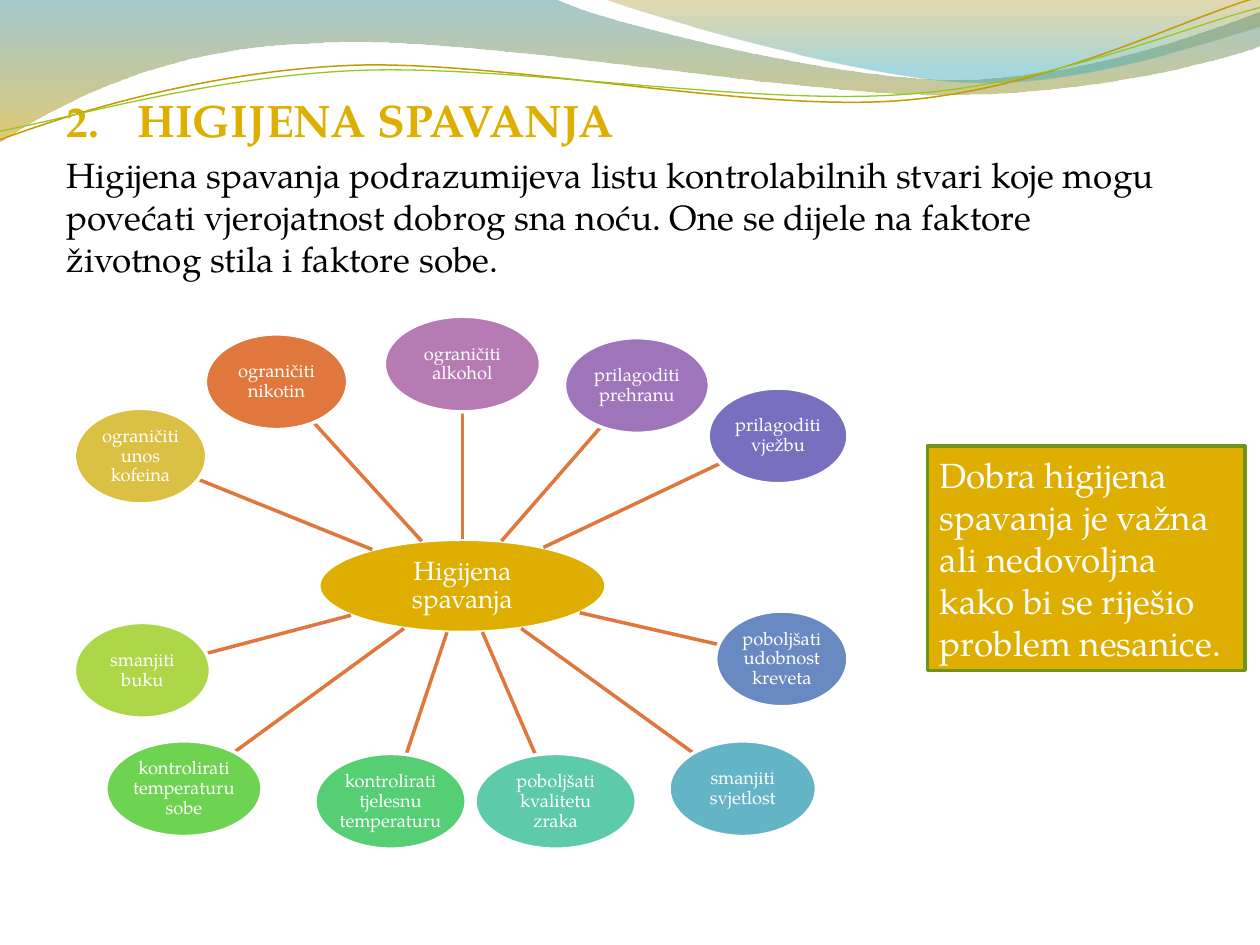
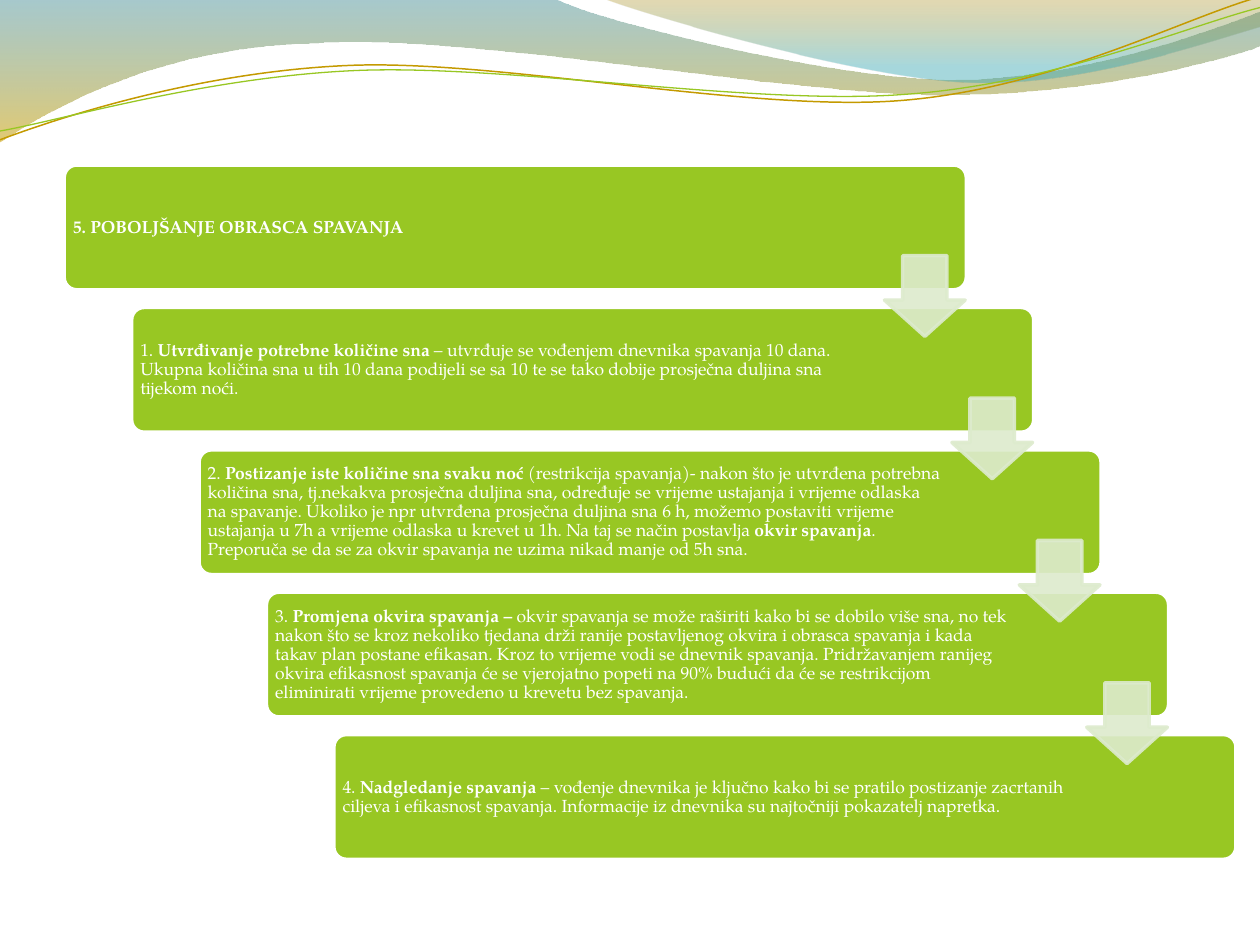
from math import hypot

from lxml.etree import SubElement
from pptx import Presentation
from pptx.dml.color import RGBColor
from pptx.enum.shapes import MSO_CONNECTOR, MSO_SHAPE
from pptx.enum.text import MSO_ANCHOR, MSO_AUTO_SIZE, PP_ALIGN
from pptx.oxml.ns import qn
from pptx.util import Inches, Pt

FONT = "TeX Gyre Pagella"
WHITE = RGBColor(0xFF, 0xFF, 0xFF)
BLACK = RGBColor(0x00, 0x00, 0x00)
GOLD = RGBColor(0xDE, 0xAE, 0x00)
DARK_GOLD = RGBColor(0xC4, 0x9A, 0x00)
GREEN = RGBColor(0x98, 0xC7, 0x23)
DARK_GREEN = RGBColor(0x70, 0x93, 0x1A)
PALE_GREEN = RGBColor(0xDD, 0xEB, 0xCD)
ORANGE = RGBColor(0xE0, 0x77, 0x3C)

# Header waves: a start point, then lines (one point) and Bezier curves (three points)
LEFT_WAVE = [
    (0, 0), [(4.4, -0.01)],
    [(4.76, 0.17), (6.64, 0.63), (7.58, 0.63)],
    [(8.53, 0.63), (9.58, 0.26), (10, 0.09)],
    [(10.01, 0.36)],
    [(9.83, 0.44), (8.7, 0.76), (7.46, 0.75)],
    [(6.22, 0.75), (3.82, 0.28), (2.57, 0.34)],
    [(1.29, 0.36), (0.46, 0.83), (-0.01, 1.13)],
]
RIGHT_WAVE = [
    (4.79, -0.01),
    [(5.09, 0.11), (6.82, 0.62), (7.69, 0.65)],
    [(8.56, 0.69), (9.61, 0.32), (10, 0.21)],
    [(10, 0)],
]
GOLD_CURVE = [
    (0, 1.11),
    [(0.48, 0.93), (1.58, 0.57), (2.77, 0.52)],
    [(3.95, 0.47), (5.93, 0.89), (7.13, 0.8)],
    [(8.33, 0.71), (9.38, 0.15), (9.98, -0.02)],
]
GREEN_CURVE = [
    (0, 1.04),
    [(0.47, 0.96), (1.64, 0.61), (2.83, 0.56)],
    [(4.03, 0.51), (5.97, 0.84), (7.17, 0.75)],
    [(8.36, 0.67), (9.41, 0.21), (10, 0.06)],
]
# Gradient stops: position, colour, opacity in percent
LEFT_STOPS = [(0, "3B8890", 45), (1, "C99E00", 55)]
RIGHT_STOPS = [(0, "A48100", 30), (0.8, "3EA9B4", 45)]

INTRODUCTION = (
    "Higijena spavanja podrazumijeva listu kontrolabilnih stvari koje mogu "
    "povećati vjerojatnost dobrog sna noću. One se dijele na faktore "
    "životnog stila i faktore sobe."
)
WARNING = (
    "Dobra higijena spavanja je važna ali nedovoljna kako bi se riješio "
    "problem nesanice."
)

# Hub and factors as left, top, width, height
HUB = (2.53, 4.28, 2.28, 0.74)
FACTOR_HEIGHT = 0.76
FACTORS = [  # text, left, top, width, colour
    ("ograničiti alkohol", 3.05, 2.51, 1.24, "B77BB4"),
    ("prilagoditi prehranu", 4.48, 2.68, 1.15, "9E75BB"),
    ("prilagoditi vježbu", 5.62, 3.08, 1.11, "786FBE"),
    ("poboljšati udobnost kreveta", 5.68, 4.85, 1.05, "6989C2"),
    ("smanjiti svjetlost", 5.31, 5.88, 1.17, "63B5C6"),
    ("poboljšati kvalitetu zraka", 3.77, 5.98, 1.28, "5DCAAA"),
    ("kontrolirati tjelesnu temperaturu", 2.5, 5.98, 1.2, "56CE73"),
    ("kontrolirati temperaturu sobe", 0.84, 5.88, 1.24, "6ED350"),
    ("smanjiti buku", 0.59, 4.94, 1.08, "ADD749"),
    ("ograničiti unos kofeina", 0.59, 3.24, 1.05, "DBC143"),
    ("ograničiti nikotin", 1.63, 2.65, 1.13, "E0773C"),
]

# Each step is a list of runs; every second run is bold
STEPS = [
    ["", "5. POBOLJŠANJE OBRASCA SPAVANJA"],
    ["1. ", "Utvrđivanje potrebne količine sna",
     " – utvrđuje se vođenjem dnevnika spavanja 10 dana. Ukupna količina sna "
     "u tih 10 dana podijeli se sa 10 te se tako dobije prosječna duljina sna "
     "tijekom noći."],
    ["2. ", "Postizanje iste količine sna svaku noć",
     " (restrikcija spavanja)- nakon što je utvrđena potrebna količina sna, "
     "tj.nekakva prosječna duljina sna, određuje se vrijeme ustajanja i "
     "vrijeme odlaska na spavanje. Ukoliko je npr utvrđena prosječna duljina "
     "sna 6 h, možemo postaviti vrijeme ustajanja u 7h a vrijeme odlaska u "
     "krevet u 1h. Na taj se način postavlja ", "okvir spavanja",
     ". Preporuča se da se za okvir spavanja ne uzima nikad manje od 5h sna."],
    ["3. ", "Promjena okvira spavanja – ",
     "okvir spavanja se može raširiti kako bi se dobilo više sna, no tek "
     "nakon što se kroz nekoliko tjedana drži ranije postavljenog okvira i "
     "obrasca spavanja i kada takav plan postane efikasan. Kroz to vrijeme "
     "vodi se dnevnik spavanja. Pridržavanjem ranijeg okvira efikasnost "
     "spavanja će se vjerojatno popeti na 90% budući da će se restrikcijom "
     "eliminirati vrijeme provedeno u krevetu bez spavanja."],
    ["4. ", "Nadgledanje spavanja",
     " – vođenje dnevnika je ključno kako bi se pratilo postizanje zacrtanih "
     "ciljeva i efikasnost spavanja. Informacije iz dnevnika su najtočniji "
     "pokazatelj napretka."],
]


def write_text(shape, text, size, color=WHITE, bold=False, align=PP_ALIGN.LEFT,
               anchor=MSO_ANCHOR.MIDDLE, spacing=1.0, insets=(0.1, 0.05, 0.1, 0.05)):
    """Write a string, or a list of runs in which every second one is bold."""
    frame = shape.text_frame
    frame.word_wrap = True
    frame.auto_size = MSO_AUTO_SIZE.NONE
    frame.vertical_anchor = anchor
    (frame.margin_left, frame.margin_top,
     frame.margin_right, frame.margin_bottom) = map(Inches, insets)
    paragraph = frame.paragraphs[0]
    paragraph.alignment = align
    paragraph.line_spacing = spacing
    parts = [text] if isinstance(text, str) else text
    for index, part in enumerate(parts):
        if not part:
            continue
        run = paragraph.add_run()
        run.text = part
        run.font.name = FONT
        run.font.size = Pt(size)
        run.font.bold = bold or index % 2 == 1
        run.font.color.rgb = color
    return paragraph


def number_paragraph(paragraph, start, color, indent):
    """Turn a paragraph into a numbered item with a hanging indent."""
    properties = paragraph._p.get_or_add_pPr()
    properties.set("marL", str(Inches(indent)))
    properties.set("indent", str(-Inches(indent)))
    bullet_color = SubElement(properties, qn("a:buClr"))
    SubElement(bullet_color, qn("a:srgbClr"), val=str(color))
    SubElement(properties, qn("a:buSzPct"), val="95000")
    SubElement(properties, qn("a:buFont"), typeface="+mj-lt")
    SubElement(properties, qn("a:buAutoNum"), type="arabicPeriod", startAt=str(start))


def set_opacity(shape, percents):
    """Set the opacity of the shape's colours, in document order."""
    colors = list(shape.element.iter(qn("a:srgbClr")))
    for color, percent in zip(colors, percents):
        SubElement(color, qn("a:alpha"), val=str(percent * 1000))


def add_shape(slide, kind, box, fill, line, adjustments=()):
    shape = slide.shapes.add_shape(kind, *map(Inches, box))
    shape.shadow.inherit = False
    shape.fill.solid()
    shape.fill.fore_color.rgb = fill
    shape.line.color.rgb = line
    shape.line.width = Pt(2)
    for index, value in enumerate(adjustments):
        shape.adjustments[index] = value
    return shape


def add_outline(slide, outline, close):
    """Draw a freeform through the end points, then bend its curved segments."""
    start, *segments = outline
    builder = slide.shapes.build_freeform(*map(Inches, start))
    builder.add_line_segments(
        [tuple(map(Inches, segment[-1])) for segment in segments], close=close)
    shape = builder.convert_to_shape()
    shape.shadow.inherit = False
    lines = list(shape.element.iter(qn("a:lnTo")))
    for line, segment in zip(lines, segments):
        if len(segment) == 1:
            continue
        curve = line.makeelement(qn("a:cubicBezTo"))
        for x, y in segment:
            SubElement(curve, qn("a:pt"), x=str(Inches(x) - shape.left),
                       y=str(Inches(y) - shape.top))
        line.getparent().replace(line, curve)
    return shape


def add_wave(slide, outline, stops):
    shape = add_outline(slide, outline, close=True)
    shape.line.fill.background()
    shape.fill.gradient()
    shape.fill.gradient_angle = 270
    for stop, (position, color, _) in zip(shape.fill.gradient_stops, stops):
        stop.position = position
        stop.color.rgb = RGBColor.from_string(color)
    set_opacity(shape, [opacity for _, _, opacity in stops])


def add_curve(slide, outline, color, width):
    shape = add_outline(slide, outline, close=False)
    shape.fill.background()
    shape.line.color.rgb = color
    shape.line.width = Pt(width)


def add_header(slide):
    add_wave(slide, LEFT_WAVE, LEFT_STOPS)
    add_wave(slide, RIGHT_WAVE, RIGHT_STOPS)
    add_curve(slide, GOLD_CURVE, DARK_GOLD, 0.85)
    add_curve(slide, GREEN_CURVE, GREEN, 0.75)


def center(box):
    left, top, width, height = box
    return left + width / 2, top + height / 2


def edge_point(box, target):
    """Point where the line from the ellipse's centre to target leaves it."""
    x, y = center(box)
    dx, dy = target[0] - x, target[1] - y
    reach = 1 / hypot(dx / (box[2] / 2), dy / (box[3] / 2))
    return x + dx * reach, y + dy * reach


def add_spoke(slide, hub, factor):
    start, end = edge_point(hub, center(factor)), edge_point(factor, center(hub))
    spoke = slide.shapes.add_connector(
        MSO_CONNECTOR.STRAIGHT, *map(Inches, (*start, *end)))
    spoke.line.color.rgb = ORANGE
    spoke.line.width = Pt(2)
    SubElement(spoke.element.find(qn("p:spPr")), qn("a:effectLst"))


def add_bubble(slide, text, box, color, size):
    bubble = add_shape(slide, MSO_SHAPE.OVAL, box, color, WHITE)
    write_text(bubble, text, size, align=PP_ALIGN.CENTER, spacing=0.9, insets=[0.01] * 4)


def build_hygiene_slide(presentation):
    slide = presentation.slides.add_slide(presentation.slide_layouts[5])
    add_header(slide)

    # Title and introduction
    title = slide.shapes.title
    title.left, title.top, title.width, title.height = map(Inches, (0.43, 0.68, 8.98, 0.55))
    heading = write_text(title, "HIGIJENA SPAVANJA", 26, color=GOLD, bold=True,
                         anchor=MSO_ANCHOR.TOP)
    number_paragraph(heading, 2, GOLD, 0.56)
    introduction = slide.shapes.add_textbox(*map(Inches, (0.43, 1.17, 8.98, 1.1)))
    write_text(introduction, INTRODUCTION, 20, color=BLACK, anchor=MSO_ANCHOR.TOP)

    # Hub with its factors
    add_bubble(slide, "Higijena spavanja", HUB, GOLD, 15)
    for text, left, top, width, color in FACTORS:
        box = (left, top, width, FACTOR_HEIGHT)
        add_spoke(slide, HUB, box)
        add_bubble(slide, text, box, RGBColor.from_string(color), 10.5)

    # Warning box
    warning = add_shape(slide, MSO_SHAPE.RECTANGLE, (7.36, 3.54, 2.52, 1.78),
                        GOLD, DARK_GREEN)
    write_text(warning, WARNING, 20)


def build_steps_slide(presentation):
    slide = presentation.slides.add_slide(presentation.slide_layouts[6])
    add_header(slide)
    step_x, step_y = 0.535, 1.13

    # Staircase of steps
    for index, runs in enumerate(STEPS):
        box = (0.51 + index * step_x, 1.31 + index * step_y, 7.16, 0.99)
        step = add_shape(slide, MSO_SHAPE.ROUNDED_RECTANGLE, box, GREEN, WHITE, [0.1])
        write_text(step, runs, 10, spacing=0.9, insets=(0.04, 0.04, 1.24, 0.04))

    # Arrows from each step to the next
    for index in range(len(STEPS) - 1):
        box = (7.02 + index * step_x, 2.03 + index * step_y, 0.64, 0.64)
        arrow = add_shape(slide, MSO_SHAPE.DOWN_ARROW, box, PALE_GREEN, PALE_GREEN,
                          [0.55, 0.45])
        set_opacity(arrow, [90, 90])


def main():
    presentation = Presentation()
    presentation.slide_width = Inches(10)
    presentation.slide_height = Inches(7.5)
    build_hygiene_slide(presentation)
    build_steps_slide(presentation)
    presentation.save("out.pptx")


if __name__ == "__main__":
    main()
